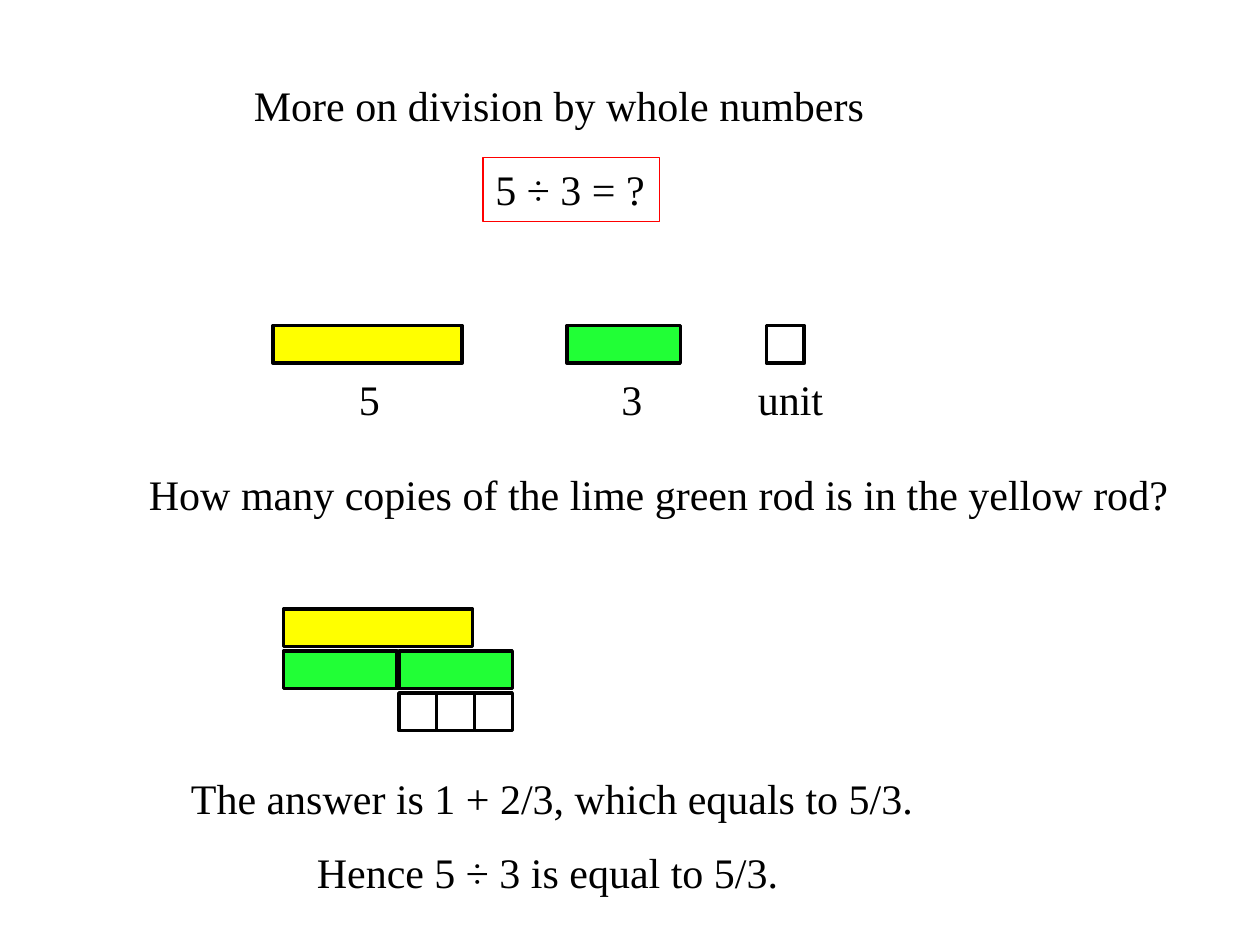
"""Build a slide that explains 5 ÷ 3 with coloured counting rods."""
from dataclasses import dataclass

from pptx import Presentation
from pptx.dml.color import RGBColor
from pptx.enum.shapes import MSO_SHAPE
from pptx.enum.text import MSO_AUTO_SIZE
from pptx.util import Emu, Pt

RECTANGLE = MSO_SHAPE.RECTANGLE
FIT_SHAPE = MSO_AUTO_SIZE.SHAPE_TO_FIT_TEXT
EMU_PER_PX = 7620
UNIT = 36
LABEL_HEIGHT = 61
FONT_NAME = "Times New Roman"
BLACK, WHITE, RED = "000000", "FFFFFF", "FF0000"
ROD_COLORS = {5: "FFFF00", 3: "21FF36", 1: WHITE}


@dataclass(frozen=True)
class Label:
    text: str
    left: int
    top: int
    width: int
    border: str | None = None


@dataclass(frozen=True)
class Rod:
    units: int
    left: int
    top: int


LABELS = [
    Label("More on division by whole numbers", 230, 70, 611),
    Label("5 ÷ 3 = ?", 460, 150, 168, RED),
    Label("5", 330, 350, 44),
    Label("3", 580, 350, 44),
    Label("unit", 710, 350, 86),
    Label("How many copies of the lime green rod is in the yellow rod?", 130, 440, 1003),
    Label("The answer is 1 + 2/3, which equals to 5/3.", 170, 730, 719),
    Label("Hence 5 ÷ 3 is equal to 5/3.", 290, 800, 468),
]

LEGEND_RODS = [Rod(5, 260, 310), Rod(3, 540, 310), Rod(1, 730, 310)]
COMPARISON_RODS = [Rod(5, 270, 580), Rod(3, 270, 620), Rod(3, 380, 620)]
UNIT_RODS = [Rod(1, 380 + index * UNIT, 660) for index in range(3)]


def px(length: int) -> Emu:
    """Convert px to EMU."""
    return Emu(length * EMU_PER_PX)


def color(value: str) -> RGBColor:
    """Convert a hex string to a colour."""
    return RGBColor.from_string(value)


def draw_label(slide, label: Label) -> None:
    """Draw one line of text, with a border if it has one."""
    shape = slide.shapes.add_textbox(
        px(label.left), px(label.top), px(label.width), px(LABEL_HEIGHT)
    )
    if label.border:
        shape.line.color.rgb = color(label.border)
        shape.line.width = Pt(0.75)
    text_frame = shape.text_frame
    text_frame.text = label.text
    text_frame.word_wrap = False
    text_frame.auto_size = FIT_SHAPE
    font = text_frame.paragraphs[0].runs[0].font
    font.name = FONT_NAME
    font.size = Pt(24)
    font.color.rgb = color(BLACK)


def draw_rod(slide, rod: Rod) -> None:
    """Draw a rod whose length and colour follow its number of units."""
    shape = slide.shapes.add_shape(
        RECTANGLE, px(rod.left), px(rod.top), px(rod.units * UNIT), px(UNIT)
    )
    shape.shadow.inherit = False
    shape.fill.solid()
    shape.fill.fore_color.rgb = color(ROD_COLORS[rod.units])
    shape.line.color.rgb = color(BLACK)
    shape.line.width = Pt(2)


def main() -> None:
    """Create the presentation and save it."""
    presentation = Presentation()
    presentation.slide_width = px(1200)
    presentation.slide_height = px(900)
    slide = presentation.slides.add_slide(presentation.slide_layouts[6])
    for label in LABELS:
        draw_label(slide, label)
    for rod in LEGEND_RODS + COMPARISON_RODS + UNIT_RODS:
        draw_rod(slide, rod)
    presentation.save("out.pptx")


if __name__ == "__main__":
    main()
